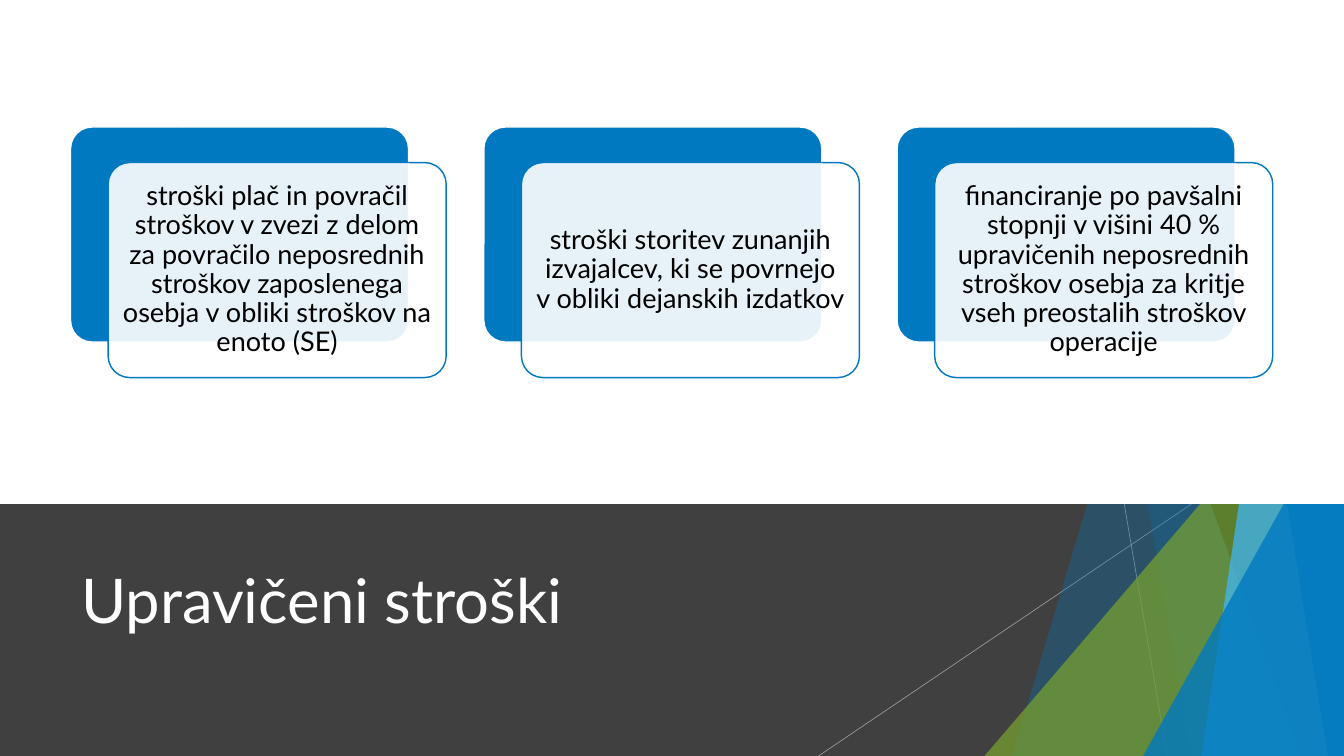
from dataclasses import dataclass

from lxml.etree import SubElement
from pptx import Presentation
from pptx.dml.color import RGBColor
from pptx.enum.shapes import MSO_CONNECTOR, MSO_SHAPE
from pptx.enum.text import MSO_ANCHOR, MSO_AUTO_SIZE, PP_ALIGN
from pptx.oxml.ns import qn
from pptx.util import Inches, Pt


@dataclass(frozen=True)
class Theme:
    font: str = "Lato"
    title_size: float = 66
    card_size: float = 29
    card_line: float = 1.5
    thin_line: float = 0.75
    white: str = "FFFFFF"
    black: str = "000000"
    band: str = "404040"
    blue: str = "0079C1"
    sky: str = "41B8FF"
    green: str = "78A22F"
    olive: str = "5A7A23"
    silver: str = "BFBFBF"


def set_colour(fill, colour):
    fill.solid()
    fill.fore_color.rgb = RGBColor.from_string(colour)


def set_opacity(parent, opacity):
    """Add an alpha value to the solid fill directly under the parent element."""
    colour = parent.find(qn("a:solidFill"))[0]
    SubElement(colour, qn("a:alpha"), val=str(opacity * 1000))


class SlideBuilder:
    """Draws on one slide; all lengths are percentages of its width and height."""

    def __init__(self, presentation, theme):
        self.width = presentation.slide_width
        self.height = presentation.slide_height
        self.theme = theme
        self.slide = presentation.slides.add_slide(presentation.slide_layouts[5])
        self.shapes = self.slide.shapes

    def x(self, share):
        return round(self.width * share / 100)

    def y(self, share):
        return round(self.height * share / 100)

    def box(self, left, top, width, height):
        return self.x(left), self.y(top), self.x(width), self.y(height)

    def paint(self, shape, colour, opacity=100, line=None):
        shape.shadow.inherit = False
        set_colour(shape.fill, colour)
        if opacity < 100:
            set_opacity(shape.element.spPr, opacity)
        if line:
            set_colour(shape.line.fill, line)
            shape.line.width = Pt(self.theme.card_line)
        else:
            shape.line.fill.background()
        return shape

    def panel(self, top, height, colour):
        shape = self.shapes.add_shape(MSO_SHAPE.RECTANGLE, *self.box(0, top, 100, height))
        self.paint(shape, colour)

    def line(self, start, end, colour, opacity):
        connector = self.shapes.add_connector(
            MSO_CONNECTOR.STRAIGHT,
            self.x(start[0]), self.y(start[1]), self.x(end[0]), self.y(end[1]))
        set_colour(connector.line.fill, colour)
        connector.line.width = Pt(self.theme.thin_line)
        properties = connector.element.spPr
        set_opacity(properties.find(qn("a:ln")), opacity)
        SubElement(properties, qn("a:effectLst"))

    def ray(self, top_left, bottom_left, colour, opacity):
        """Full-height facet between a slanted edge and the right side of the slide."""
        freeform = self.shapes.build_freeform(self.x(top_left), 0)
        corners = [(100, 0), (100, 100), (bottom_left, 100)]
        freeform.add_line_segments([(self.x(x), self.y(y)) for x, y in corners], close=True)
        self.paint(freeform.convert_to_shape(), colour, opacity)

    def corner(self, left, top, colour, opacity):
        """Triangle filling the bottom right corner of the slide."""
        shape = self.shapes.add_shape(
            MSO_SHAPE.ISOSCELES_TRIANGLE, *self.box(left, top, 100 - left, 100 - top))
        shape.adjustments[0] = 1
        self.paint(shape, colour, opacity)

    def set_text(self, shape, text, size, colour, alignment):
        frame = shape.text_frame
        frame.text = text
        frame.word_wrap = True
        frame.auto_size = MSO_AUTO_SIZE.NONE
        frame.vertical_anchor = MSO_ANCHOR.MIDDLE
        paragraph = frame.paragraphs[0]
        paragraph.alignment = alignment
        font = paragraph.runs[0].font
        font.name = self.theme.font
        font.size = Pt(size)
        font.color.rgb = RGBColor.from_string(colour)
        return frame

    def title(self, text, left, top, width, height):
        """Fill the title placeholder and bring it in front of the shapes so far."""
        title = self.shapes.title
        title.left, title.top, title.width, title.height = self.box(left, top, width, height)
        self.set_text(title, text, self.theme.title_size, self.theme.white, PP_ALIGN.LEFT)
        self.shapes[-1].element.addnext(title.element)

    def rounded(self, left, top, width, height, colour, opacity, line):
        shape = self.shapes.add_shape(
            MSO_SHAPE.ROUNDED_RECTANGLE, *self.box(left, top, width, height))
        shape.adjustments[0] = 0.1
        return self.paint(shape, colour, opacity, line)

    def card(self, text, left, top, width, height, shift):
        """Blue plate with a translucent text card shifted down and right."""
        theme = self.theme
        self.rounded(left, top, width, height, theme.blue, 100, theme.white)
        front = self.rounded(left + shift[0], top + shift[1], width, height,
                             theme.white, 90, theme.blue)
        frame = self.set_text(front, text, theme.card_size, theme.black, PP_ALIGN.CENTER)
        frame.margin_left = frame.margin_right = Inches(0.12)
        frame.margin_top = frame.margin_bottom = Inches(0.12)
        frame.paragraphs[0].line_spacing = 0.9
        frame.paragraphs[0].space_after = Pt(10)


COSTS = [
    "stroški plač in povračil stroškov v zvezi z delom za povračilo neposrednih "
    "stroškov zaposlenega osebja v obliki stroškov na enoto (SE)",
    "stroški storitev zunanjih izvajalcev, ki se povrnejo v obliki dejanskih izdatkov",
    "financiranje po pavšalni stopnji v višini 40 % upravičenih neposrednih "
    "stroškov osebja za kritje vseh preostalih stroškov operacije",
]
BAND_TOP = 200 / 3
CARD_LEFT, CARD_STEP = 5.25, 30.75


def main():
    theme = Theme()
    presentation = Presentation()
    presentation.slide_width = Inches(20)
    presentation.slide_height = Inches(11.25)
    builder = SlideBuilder(presentation, theme)

    builder.panel(BAND_TOP, 100 - BAND_TOP, theme.band)
    builder.line((83.65, BAND_TOP), (86.85, 100), theme.silver, 70)
    builder.line((88.65, BAND_TOP), (60.9, 100), theme.silver, 70)
    builder.ray(92.1, 75.3, theme.blue, 30)
    builder.ray(78.75, 88.7, theme.blue, 20)
    builder.corner(73.25, 44.44, theme.green, 72)
    builder.ray(76.55, 96.85, theme.olive, 70)
    builder.ray(97.75, 89.4, theme.sky, 70)
    builder.ray(89.7, 98.8, theme.blue, 65)
    builder.corner(85.05, 52.36, theme.blue, 80)
    builder.title("Upravičeni stroški", 5.55, 69.5, 70.5, 19.3)

    builder.panel(0, BAND_TOP, theme.white)
    for column, text in enumerate(COSTS):
        builder.card(text, CARD_LEFT + column * CARD_STEP, 16.8, 25.15, 28.44, (2.8, 4.7))

    presentation.save("out.pptx")


if __name__ == "__main__":
    main()
